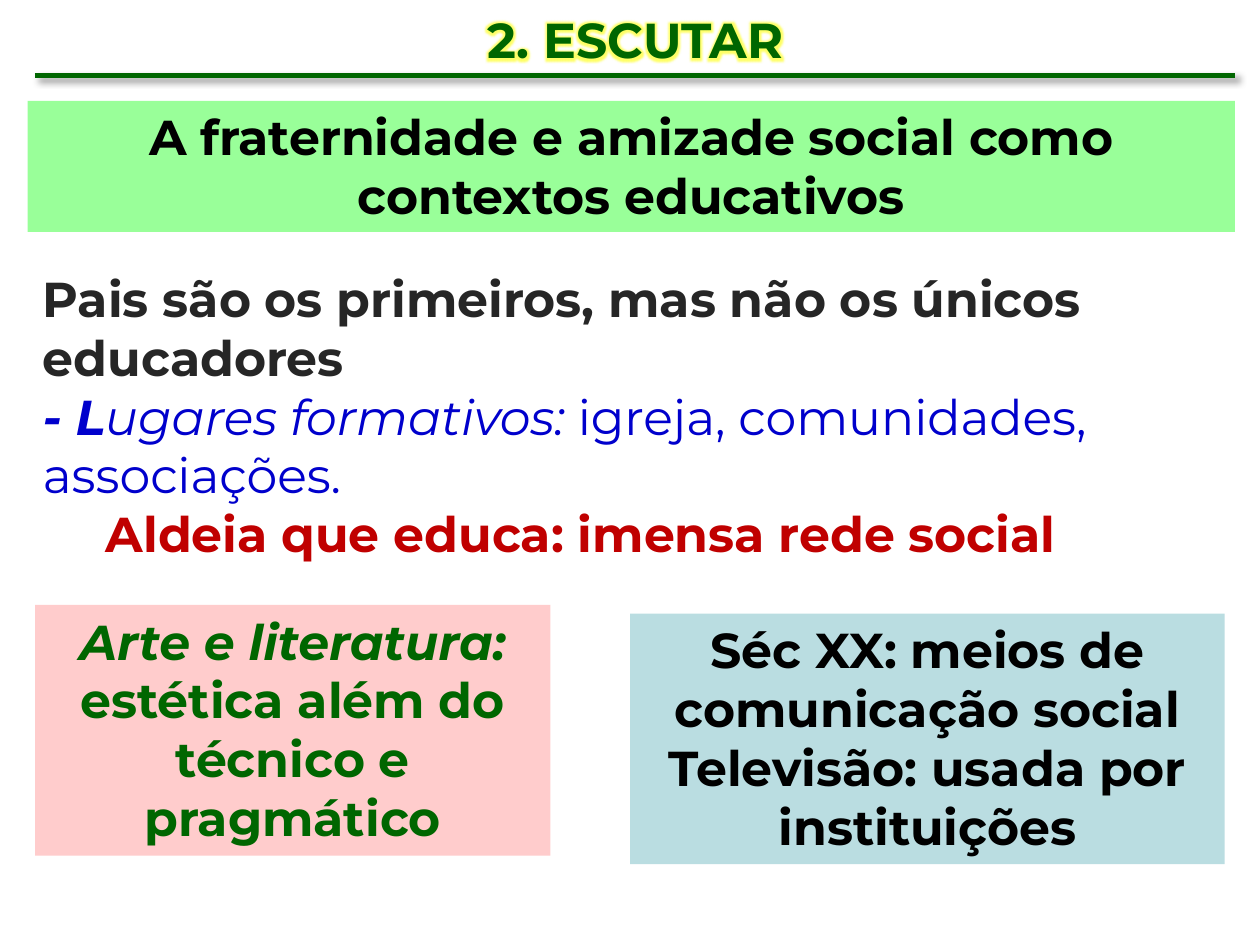
from lxml.etree import SubElement
from pptx import Presentation
from pptx.dml.color import RGBColor
from pptx.enum.shapes import MSO_CONNECTOR, MSO_SHAPE
from pptx.enum.text import MSO_ANCHOR, MSO_AUTO_SIZE, PP_ALIGN
from pptx.oxml import parse_xml
from pptx.oxml.ns import nsdecls, qn
from pptx.util import Pt

FONT = "Montserrat"
SIZE = 28
HEX = {
    "green": "006600", "black": "000000", "gray": "262626", "blue": "0000CC",
    "red": "C00000", "lime": "99FF99", "pink": "FFCCCC", "teal": "BADDE1",
    "glow": "FFFF66",
}


def rgb(name):
    return RGBColor.from_string(HEX[name])


def write(para, text, color="black", bold=True, italic=False):
    run = para.add_run()
    run.text = text
    font = run.font
    font.name, font.size = FONT, Pt(SIZE)
    font.bold, font.italic = bold, italic
    font.color.rgb = rgb(color)
    return run


def place(shape, box):
    """Move a shape to a box of left, top, width and height in points."""
    shape.left, shape.top, shape.width, shape.height = map(Pt, box)


def effect(props, body):
    """Make an effect list; props is the element that it follows."""
    props.addnext(parse_xml(f'<a:effectLst {nsdecls("a")}>{body}</a:effectLst>'))


def head(slide, box):
    """Glowing title with a shadowed rule below it."""
    left, top, width, height = box
    title = slide.shapes.title
    place(title, box)
    frame = title.text_frame
    frame.auto_size = MSO_AUTO_SIZE.NONE
    frame.vertical_anchor = MSO_ANCHOR.MIDDLE
    para = frame.paragraphs[0]
    para.alignment = PP_ALIGN.CENTER
    run = write(para, "2. ESCUTAR", color="green")
    fill = run.font._element.find(qn("a:solidFill"))
    effect(fill, f'<a:glow rad="{Pt(5)}"><a:srgbClr val="{HEX["glow"]}"/></a:glow>')

    y = top + height + 2
    rule = slide.shapes.add_connector(
        MSO_CONNECTOR.STRAIGHT, Pt(left), Pt(y), Pt(left + width), Pt(y))
    rule.line.color.rgb = rgb("green")
    rule.line.width = Pt(3)
    effect(rule._element.spPr.find(qn("a:ln")),
           f'<a:outerShdw blurRad="{Pt(4)}" dist="{Pt(3)}" dir="2700000" '
           'rotWithShape="0"><a:srgbClr val="000000"><a:alpha val="40000"/>'
           '</a:srgbClr></a:outerShdw>')


def body(slide, box, paras):
    """Plain paragraphs, each a list of (text, format) runs."""
    holder = slide.placeholders[1]
    place(holder, box)
    frame = holder.text_frame
    frame.auto_size = MSO_AUTO_SIZE.NONE
    for i, runs in enumerate(paras):
        para = frame.add_paragraph() if i else frame.paragraphs[0]
        para.space_before = Pt(0)
        props = para._p.get_or_add_pPr()
        props.set("marL", "0")
        props.set("indent", "0")
        SubElement(props, qn("a:buNone"))
        for text, look in runs:
            write(para, text, **look)


def panel(slide, box, fill, runs, after=0):
    """Filled box with one centred paragraph."""
    shape = slide.shapes.add_shape(MSO_SHAPE.RECTANGLE, *map(Pt, box))
    shape.shadow.inherit = False
    shape.fill.solid()
    shape.fill.fore_color.rgb = rgb(fill)
    shape.line.fill.background()
    frame = shape.text_frame
    frame.word_wrap = True
    frame.vertical_anchor = MSO_ANCHOR.TOP
    para = frame.paragraphs[0]
    para.alignment = PP_ALIGN.CENTER
    para.space_after = Pt(after)
    for text, look in runs:
        write(para, text, **look)


def main():
    deck = Presentation()
    deck.slide_width, deck.slide_height = Pt(720), Pt(540)
    slide = deck.slides.add_slide(deck.slide_layouts[1])

    head(slide, (20, 3.6, 686, 37.4))
    body(slide, (17.3, 149.8, 689, 216.7), [
        [("Pais são os primeiros, mas não os únicos educadores",
          {"color": "gray"})],
        [("- L", {"color": "blue", "italic": True}),
         ("ugares formativos: ",
          {"color": "blue", "bold": False, "italic": True}),
         ("igreja, comunidades, associações.",
          {"color": "blue", "bold": False})],
        [("\tAldeia que educa: imensa rede social", {"color": "red"})],
    ])
    panel(slide, (15.8, 57.6, 689.8, 75), "lime",
          [("A fraternidade e amizade social como contextos educativos", {})])
    panel(slide, (20, 345.6, 294.5, 143.3), "pink",
          [("Arte e literatura: ", {"color": "green", "italic": True}),
           ("estética além do técnico e pragmático", {"color": "green"})],
          after=6)
    panel(slide, (360, 350.6, 339.8, 143.3), "teal",
          [("Séc XX: meios de comunicação social Televisão: usada por "
            "instituições", {})], after=6)

    deck.save("out.pptx")


if __name__ == "__main__":
    main()
